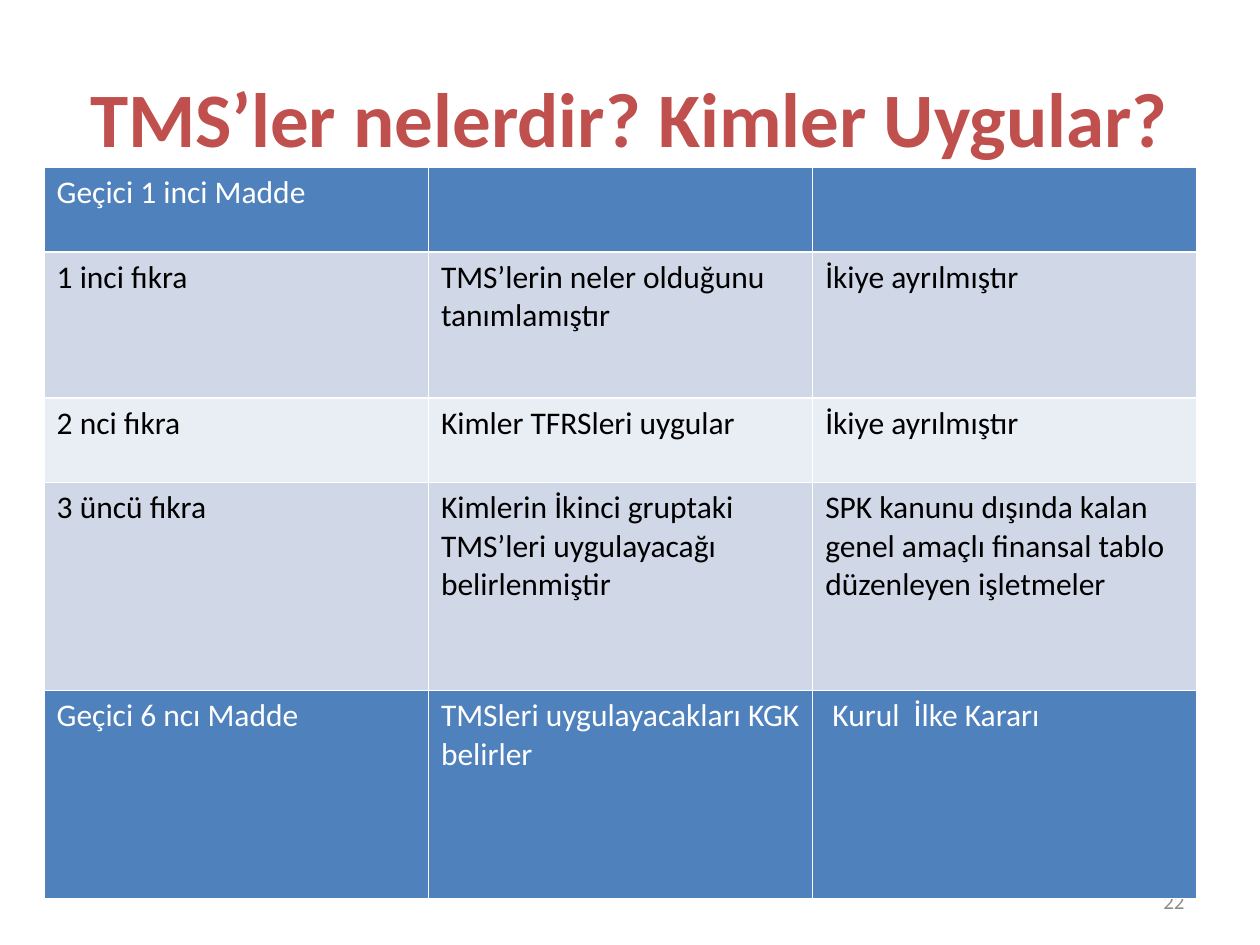
from pptx import Presentation
from pptx.dml.color import RGBColor
from pptx.enum import text
from pptx.util import Inches, Pt

FONT = "Calibri"
RED = RGBColor(0xC0, 0x50, 0x4D)
BLUE = RGBColor(0x4F, 0x81, 0xBD)
BAND_DARK = RGBColor(0xD0, 0xD8, 0xE8)
BAND_LIGHT = RGBColor(0xE9, 0xED, 0xF4)
WHITE = RGBColor(0xFF, 0xFF, 0xFF)
BLACK = RGBColor(0, 0, 0)
GREY = RGBColor(0x8C, 0x8C, 0x8C)

TITLE = "TMS’ler nelerdir? Kimler Uygular?"
PAGE_NUMBER = "22"
# Row height in inches, fill, text colour, cell texts
ROWS = [
    (0.67, BLUE, WHITE, ("Geçici 1 inci Madde", "", "")),
    (1.16, BAND_DARK, BLACK,
     ("1 inci fıkra", "TMS’lerin neler olduğunu tanımlamıştır", "İkiye ayrılmıştır")),
    (0.67, BAND_LIGHT, BLACK,
     ("2 nci fıkra", "Kimler TFRSleri uygular", "İkiye ayrılmıştır")),
    (1.65, BAND_DARK, BLACK,
     ("3 üncü fıkra",
      "Kimlerin İkinci gruptaki TMS’leri uygulayacağı belirlenmiştir",
      "SPK kanunu dışında kalan genel amaçlı finansal tablo düzenleyen işletmeler")),
    (1.65, BLUE, WHITE,
     ("Geçici 6 ncı Madde", "TMSleri uygulayacakları KGK belirler",
      " Kurul  İlke Kararı")),
]
COLUMNS = 3
COLUMN_WIDTH = 3.05


def style(para, size, colour, bold=False, align=None):
    para.font.name = FONT
    para.font.size = Pt(size)
    para.font.color.rgb = colour
    para.font.bold = bold
    para.alignment = align


def add_title(page):
    title = page.shapes.title
    title.left, title.top = Inches(0.5), Inches(0.3)
    title.width, title.height = Inches(9), Inches(1.25)
    title.text_frame.text = TITLE
    title.text_frame.vertical_anchor = text.MSO_ANCHOR.MIDDLE
    style(title.text_frame.paragraphs[0], 44, RED, True, text.PP_ALIGN.CENTER)


def add_page_number(page):
    box = page.shapes.add_textbox(Inches(7.17), Inches(6.95), Inches(2.33), Inches(0.4))
    frame = box.text_frame
    frame.word_wrap = True
    frame.vertical_anchor = text.MSO_ANCHOR.MIDDLE
    frame.text = PAGE_NUMBER
    style(frame.paragraphs[0], 12, GREY, align=text.PP_ALIGN.RIGHT)


def add_article_table(page):
    height = sum(row[0] for row in ROWS)
    table = page.shapes.add_table(
        len(ROWS), COLUMNS, Inches(0.35), Inches(1.33),
        Inches(COLUMNS * COLUMN_WIDTH), Inches(height)).table
    for column in table.columns:
        column.width = Inches(COLUMN_WIDTH)
    for row, (row_height, fill, colour, words) in zip(table.rows, ROWS):
        row.height = Inches(row_height)
        for cell, word in zip(row.cells, words):
            cell.fill.solid()
            cell.fill.fore_color.rgb = fill
            cell.text = word
            style(cell.text_frame.paragraphs[0], 18, colour)


def main():
    deck = Presentation()
    deck.slide_width, deck.slide_height = Inches(10), Inches(7.5)
    page = deck.slides.add_slide(deck.slide_layouts[5])
    add_title(page)
    add_page_number(page)
    add_article_table(page)
    deck.save("out.pptx")


if __name__ == "__main__":
    main()
